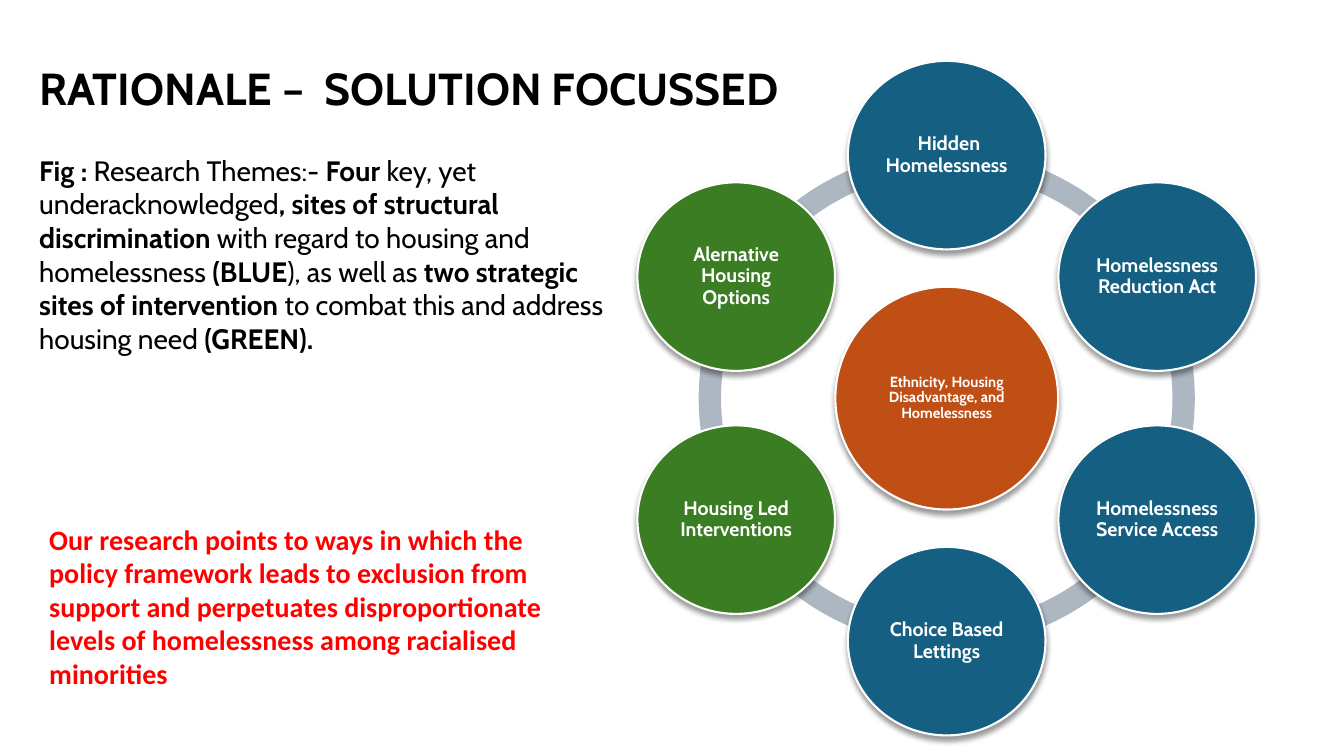
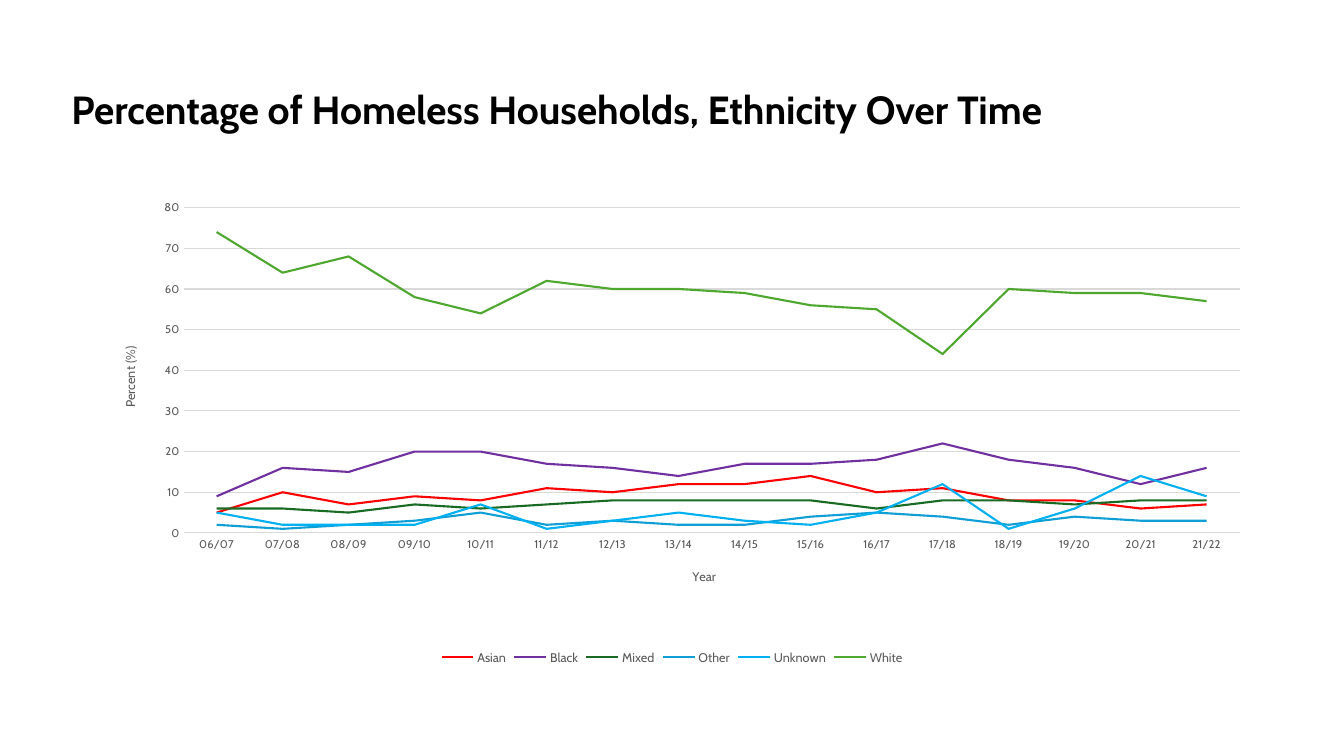
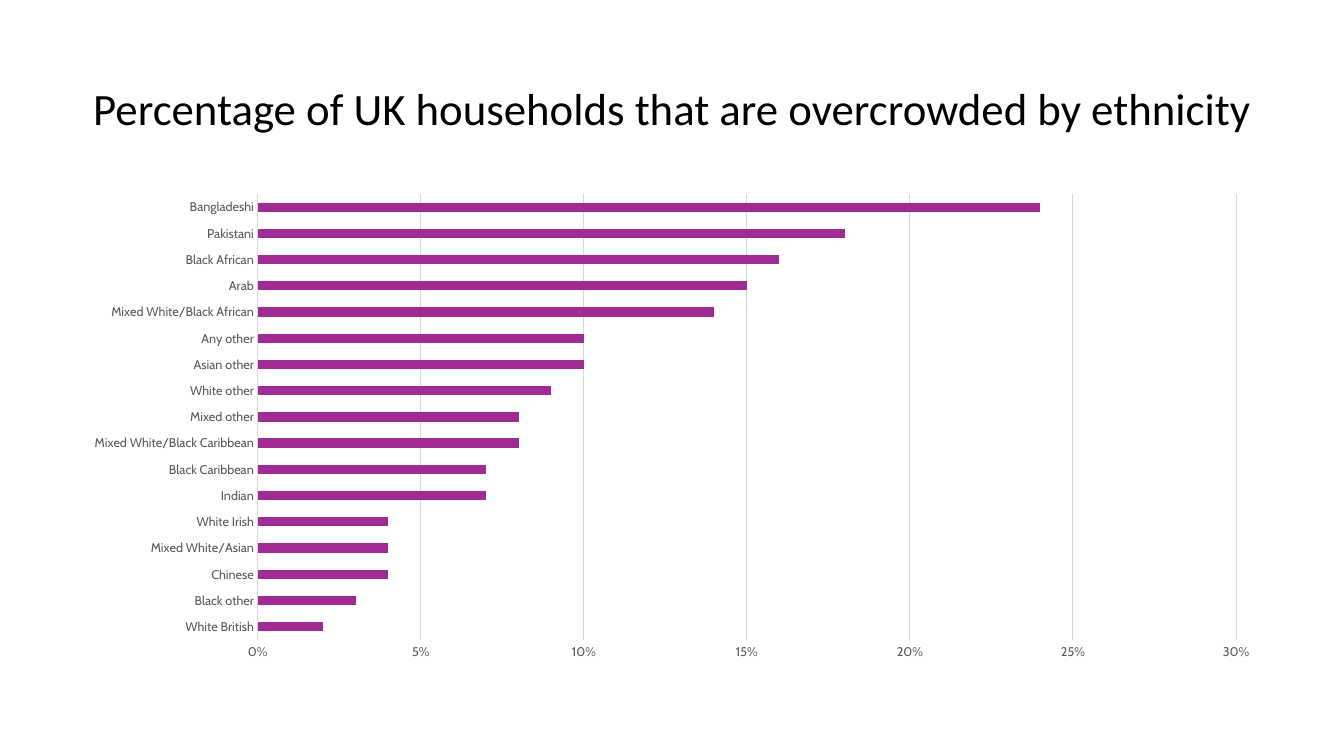
from dataclasses import dataclass
from math import cos, radians, sin

from lxml.etree import SubElement
from pptx import Presentation
from pptx.chart.data import CategoryChartData as ChartData
from pptx.dml.color import RGBColor
from pptx.enum.chart import XL_CHART_TYPE as ChartType
from pptx.enum.chart import XL_LEGEND_POSITION as LegendSide
from pptx.enum.chart import XL_TICK_MARK as Tick
from pptx.enum.shapes import MSO_SHAPE as Preset
from pptx.enum.text import MSO_ANCHOR as Anchor
from pptx.enum.text import PP_ALIGN as Align
from pptx.oxml.ns import qn
from pptx.util import Inches, Pt


@dataclass(frozen=True)
class Theme:
    brand: str = "Cabin"
    plain: str = "Calibri"
    ink: str = "000000"
    white: str = "FFFFFF"
    alert: str = "FF0000"
    ring: str = "ACB7C1"
    hub: str = "C04F15"
    site: str = "156082"
    intervention: str = "3B7D23"
    label: str = "595959"
    rule: str = "D9D9D9"
    bar: str = "A02B93"
    title: float = 32
    chart_title: float = 28
    body: float = 20
    node: float = 14
    hub_text: float = 10.5
    legend: float = 9
    tick: float = 8


THEME = Theme()
TITLE_BOX = (0.61, 0.7, 12.26, 0.81)
CHART_BOX = (0.7, 1.83, 11.93, 4.81)

THEMES_TEXT = [
    ("Fig : ", True), ("Research Themes:- ", False), ("Four", True),
    (" key, yet underacknowledged", False),
    (", sites of structural discrimination ", True),
    ("with regard to housing and homelessness ", False),
    ("(BLUE", True), ("), as well as ", False),
    ("two strategic sites of intervention ", True),
    ("to combat this and address housing need ", False), ("(GREEN).", True),
]
FINDING = [(
    "Our research points to ways in which the policy framework leads to "
    "exclusion from support and perpetuates disproportionate levels of "
    "homelessness among racialised minorities", True)]
NODES = [
    (" Hidden Homelessness", THEME.site),
    ("Homelessness Reduction Act", THEME.site),
    ("Homelessness Service Access", THEME.site),
    ("Choice Based Lettings", THEME.site),
    ("Housing Led Interventions", THEME.intervention),
    ("Alernative Housing Options", THEME.intervention),
]
YEARS = [f"{year:02}/{year + 1:02}" for year in range(6, 22)]
HOUSEHOLDS = [
    ("Asian", "FF0000", (5, 10, 7, 9, 8, 11, 10, 12, 12, 14, 10, 11, 8, 8, 6, 7)),
    ("Black", "7030A0", (9, 16, 15, 20, 20, 17, 16, 14, 17, 17, 18, 22, 18, 16, 12, 16)),
    ("Mixed", "196B24", (6, 6, 5, 7, 6, 7, 8, 8, 8, 8, 6, 8, 8, 7, 8, 8)),
    ("Other", "0F9ED5", (2, 1, 2, 3, 5, 2, 3, 2, 2, 4, 5, 4, 2, 4, 3, 3)),
    ("Unknown", "00B0F0", (5, 2, 2, 2, 7, 1, 3, 5, 3, 2, 5, 12, 1, 6, 14, 9)),
    ("White", "4EA72E", (74, 64, 68, 58, 54, 62, 60, 60, 59, 56, 55, 44, 60, 59, 59, 57)),
]
OVERCROWDED = {
    "White British": 0.02, "Black other": 0.03, "Chinese": 0.04,
    "Mixed White/Asian": 0.04, "White Irish": 0.04, "Indian": 0.07,
    "Black Caribbean": 0.07, "Mixed White/Black Caribbean": 0.08,
    "Mixed other": 0.08, "White other": 0.09, "Asian other": 0.1,
    "Any other": 0.1, "Mixed White/Black African": 0.14, "Arab": 0.15,
    "Black African": 0.16, "Pakistani": 0.18, "Bangladeshi": 0.24,
}


def assign(target, formats):
    for key, value in formats.items():
        setattr(target, key, value)


def style(font, size, color, name=THEME.brand, bold=False):
    assign(font, {"size": Pt(size), "name": name, "bold": bold})
    font.color.rgb = RGBColor.from_string(color)


def stroke(line, color, width):
    line.color.rgb = RGBColor.from_string(color)
    line.width = Pt(width)


def inches(box):
    return [Inches(length) for length in box]


def add_text(slide, box, runs, size, color=THEME.ink, name=THEME.brand,
             anchor=Anchor.TOP, align=Align.LEFT, spacing=1.0):
    frame = slide.shapes.add_textbox(*inches(box)).text_frame
    assign(frame, {"word_wrap": True, "vertical_anchor": anchor})
    paragraph = frame.paragraphs[0]
    assign(paragraph, {"alignment": align, "line_spacing": spacing})
    for words, bold in runs:
        run = paragraph.add_run()
        run.text = words
        style(run.font, size, color, name, bold)


def add_title(slide, box, words, size=THEME.title, bold=True, **formats):
    add_text(slide, box, [(words, bold)], size, anchor=Anchor.MIDDLE,
             spacing=0.9, **formats)


def add_shadow(shape):
    effects = SubElement(shape._element.spPr, qn("a:effectLst"))
    shadow = SubElement(effects, qn("a:outerShdw"), blurRad=str(Pt(4)),
                        dist=str(Pt(3)), dir="5400000", rotWithShape="0")
    black = SubElement(shadow, qn("a:srgbClr"), val=THEME.ink)
    SubElement(black, qn("a:alpha"), val="40000")


def add_disc(slide, center, size, words, color, text_size):
    (x, y), (width, height) = center, size
    disc = slide.shapes.add_shape(
        Preset.OVAL, *inches((x - width / 2, y - height / 2, width, height)))
    disc.fill.solid()
    disc.fill.fore_color.rgb = RGBColor.from_string(color)
    stroke(disc.line, THEME.white, 1.5)
    add_shadow(disc)
    frame = disc.text_frame
    assign(frame, {"word_wrap": True, "vertical_anchor": Anchor.MIDDLE})
    assign(frame, {f"margin_{side}": Inches(0.02)
                   for side in ("left", "top", "right", "bottom")})
    paragraph = frame.paragraphs[0]
    assign(paragraph, {"alignment": Align.CENTER, "line_spacing": 0.9})
    run = paragraph.add_run()
    run.text = words
    style(run.font, text_size, THEME.white, bold=True)


def add_cycle(slide, box):
    left, top, width, height = box
    x, y = left + width / 2, top + height / 2
    ring = slide.shapes.add_shape(Preset.DONUT, *inches(box))
    ring.adjustments[0] = 0.045
    ring.shadow.inherit = False
    ring.fill.solid()
    ring.fill.fore_color.rgb = RGBColor.from_string(THEME.ring)
    ring.line.fill.background()
    add_disc(slide, (x, y), (2.21, 2.21),
             "Ethnicity, Housing Disadvantage, and Homelessness",
             THEME.hub, THEME.hub_text)
    orbit = 0.49 * width
    for place, (words, color) in enumerate(NODES):
        angle = radians(360 / len(NODES) * place)
        center = x + orbit * sin(angle), y - orbit * cos(angle)
        add_disc(slide, center, (1.96, 1.87), words, color, THEME.node)


def set_layout(part, index, target=None, **fractions):
    for old in part.findall(qn("c:layout")):
        part.remove(old)
    layout = part.makeelement(qn("c:layout"))
    part.insert(index, layout)
    manual = SubElement(layout, qn("c:manualLayout"))
    if target:
        SubElement(manual, qn("c:layoutTarget"), val=target)
    for mode in ("xMode", "yMode"):
        SubElement(manual, qn(f"c:{mode}"), val="edge")
    for key, value in fractions.items():
        SubElement(manual, qn(f"c:{key}"), val=str(value))


def add_chart(slide, box, kind, categories, series, top, step, tick_size,
              number_format="General"):
    values = ChartData(number_format=number_format)
    values.categories = categories
    for name, _, numbers in series:
        values.add_series(name, numbers)
    chart = slide.shapes.add_chart(kind, *inches(box), values).chart
    assign(chart, {"has_title": False, "has_legend": False})
    style(chart.font, 10, THEME.ink)
    chart.plots[0].vary_by_categories = False
    for axis in (chart.category_axis, chart.value_axis):
        assign(axis, {"major_tick_mark": Tick.NONE, "minor_tick_mark": Tick.NONE})
        style(axis.tick_labels.font, tick_size, THEME.label)
    stroke(chart.category_axis.format.line, THEME.rule, 0.75)
    scale = chart.value_axis
    assign(scale, {"minimum_scale": 0, "maximum_scale": top,
                   "major_unit": step, "has_major_gridlines": True})
    assign(scale.tick_labels, {"number_format": number_format,
                               "number_format_is_linked": False})
    scale.format.line.fill.background()
    stroke(scale.major_gridlines.format.line, THEME.rule, 0.75)
    return chart


def name_axis(axis, words, x, y, turn=0):
    frame = axis.axis_title.text_frame
    frame.text = words
    frame._txBody.bodyPr.set("rot", str(turn * 60000))
    style(frame.paragraphs[0].runs[0].font, THEME.legend, THEME.label)
    set_layout(axis.axis_title._element, 1, x=x, y=y)


def add_trend(slide, box):
    chart = add_chart(slide, box, ChartType.LINE, YEARS, HOUSEHOLDS, 80, 10,
                      THEME.tick)
    for line, (_, color, _) in zip(chart.plots[0].series, HOUSEHOLDS):
        line.smooth = False
        stroke(line.format.line, color, 1.5)
    name_axis(chart.category_axis, "Year", 0.515, 0.785)
    name_axis(chart.value_axis, "Percent (%)", 0.04, 0.33, -90)
    set_layout(chart._chartSpace.chart.plotArea, 0, "inner",
               x=0.094, y=0.048, w=0.878, h=0.671)
    chart.has_legend = True
    assign(chart.legend, {"position": LegendSide.BOTTOM,
                          "include_in_layout": False})
    style(chart.legend.font, THEME.legend, THEME.label)


def add_ranking(slide, box):
    series = [("Series 1", THEME.bar, tuple(OVERCROWDED.values()))]
    chart = add_chart(slide, box, ChartType.BAR_CLUSTERED, list(OVERCROWDED),
                      series, 0.3, 0.05, THEME.legend, "0%")
    plot = chart.plots[0]
    plot.gap_width = 182
    bars = plot.series[0].format.fill
    bars.solid()
    bars.fore_color.rgb = RGBColor.from_string(THEME.bar)


def build_rationale(slide):
    add_cycle(slide, (6.93, 1.49, 4.92, 4.92))
    add_title(slide, (0.29, 0.18, 11.5, 1.45), "RATIONALE –  SOLUTION FOCUSSED")
    add_text(slide, (0.29, 1.47, 5.82, 2.12), THEMES_TEXT, THEME.body)
    add_text(slide, (0.39, 5.13, 5.37, 1.78), FINDING, THEME.body,
             THEME.alert, THEME.plain)


def build_households(slide):
    add_title(slide, TITLE_BOX,
              "Percentage of Homeless Households, Ethnicity Over Time",
              THEME.chart_title)
    add_trend(slide, CHART_BOX)


def build_overcrowding(slide):
    left, *rest = TITLE_BOX
    add_title(slide, (left - 0.07, *rest),
              "Percentage of UK households that are overcrowded by ethnicity",
              bold=False, name=THEME.plain, align=Align.CENTER)
    add_ranking(slide, CHART_BOX)


def main():
    deck = Presentation()
    assign(deck, {"slide_width": Inches(13.33), "slide_height": Inches(7.5)})
    for build in (build_rationale, build_households, build_overcrowding):
        build(deck.slides.add_slide(deck.slide_layouts[6]))
    deck.save("out.pptx")


if __name__ == "__main__":
    main()
